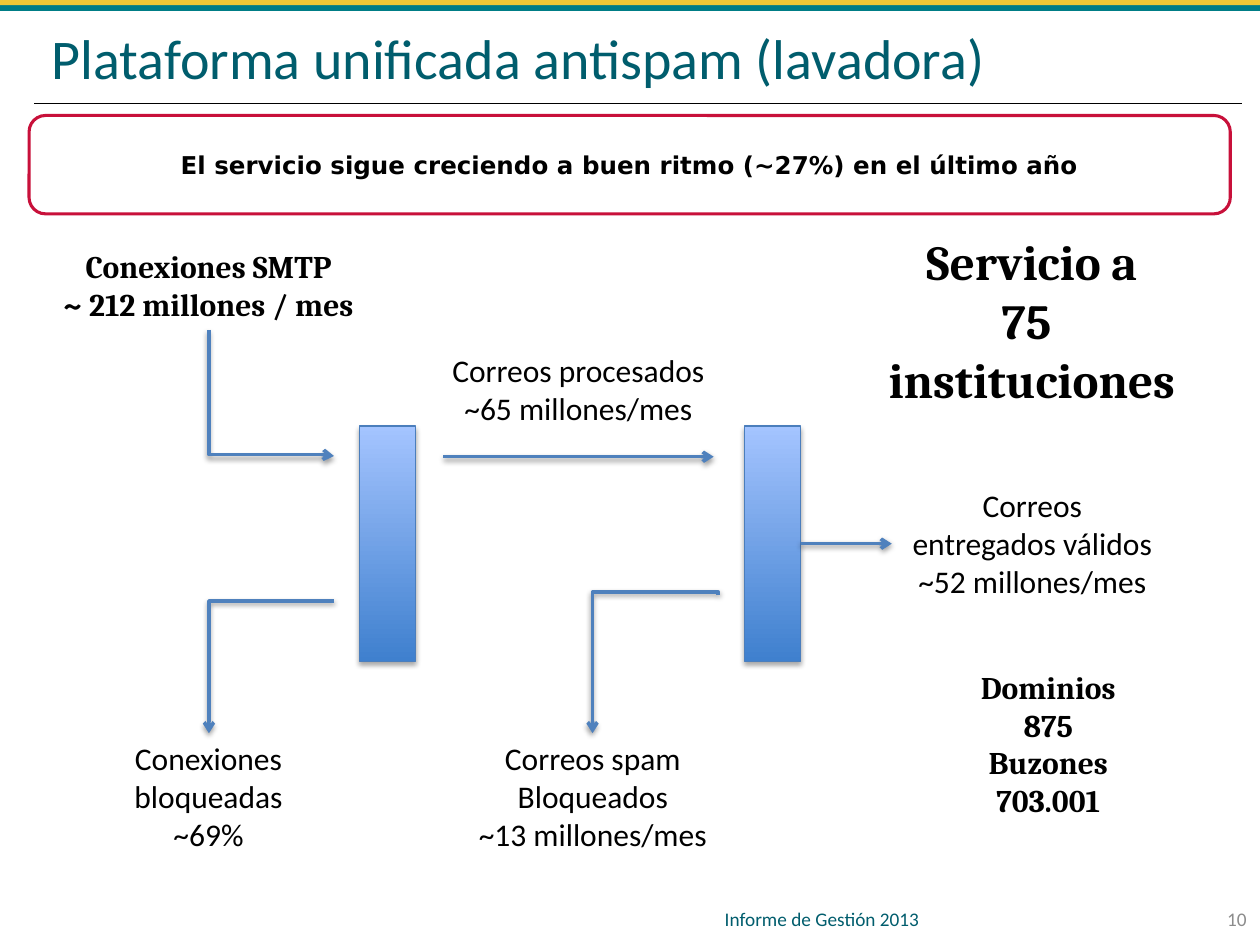
from lxml import etree
from pptx import Presentation
from pptx.dml.color import RGBColor
from pptx.enum.shapes import MSO_CONNECTOR as Link, MSO_SHAPE as Shape
from pptx.enum.text import MSO_ANCHOR as Anchor, PP_ALIGN as Align
from pptx.oxml.ns import qn
from pptx.util import Pt

COLORS = {
    "teal": "007D86", "yellow": "F1C835", "title": "005D6D", "black": "000000",
    "grey": "8C8C8C", "red": "C8103A", "arrow": "4F81BD", "bar_edge": "4B7EBC",
    "bar_bottom": "3F80CE", "bar_top": "A4C4FF",
}


def rgb(name):
    return RGBColor.from_string(COLORS[name])


def add_shadow(shape, alpha, distance):
    """Add a soft shadow straight below; alpha in percent, distance in points."""
    effects = shape._element.spPr.find(qn("a:effectLst"))
    if effects is None:
        effects = etree.SubElement(shape._element.spPr, qn("a:effectLst"))
    outer = etree.SubElement(effects, qn("a:outerShdw"), blurRad=str(Pt(3.1)),
                             dist=str(Pt(distance)), dir="5400000", rotWithShape="0")
    color = etree.SubElement(outer, qn("a:srgbClr"), val=COLORS["black"])
    etree.SubElement(color, qn("a:alpha"), val=str(alpha * 1000))


def write(shape, lines, size, font="Calibri", color="black", bold=False,
          align=Align.CENTER, anchor=Anchor.TOP, wrap=True):
    frame = shape.text_frame
    frame.word_wrap = wrap
    frame.vertical_anchor = anchor
    frame.text = "\n".join(lines)
    for para in frame.paragraphs:
        para.alignment = align
        for span in para.runs:
            span.font.size = Pt(size)
            span.font.name = font
            span.font.bold = bold
            span.font.color.rgb = rgb(color)


def add_text(page, left, top, width, height, lines, size=18, **style):
    box = page.shapes.add_textbox(Pt(left), Pt(top), Pt(width), Pt(height))
    write(box, lines, size, **style)


def add_band(page, height, color):
    band = page.shapes.add_shape(Shape.RECTANGLE, 0, 0, Pt(720), Pt(height))
    band.shadow.inherit = False
    band.fill.solid()
    band.fill.fore_color.rgb = rgb(color)
    band.line.fill.background()


def add_filter_bar(page, left):
    bar = page.shapes.add_shape(Shape.RECTANGLE, Pt(left), Pt(243.5), Pt(32.2), Pt(134.4))
    bar.shadow.inherit = False
    bar.fill.gradient()
    bar.fill.gradient_angle = 90
    for stop, color in zip(bar.fill.gradient_stops, ("bar_bottom", "bar_top")):
        stop.color.rgb = rgb(color)
    bar.line.color.rgb = rgb("bar_edge")
    bar.line.width = Pt(0.75)
    add_shadow(bar, 35, 1.8)


def add_banner(page, text):
    banner = page.shapes.add_shape(Shape.ROUNDED_RECTANGLE,
                                   Pt(16.6), Pt(66), Pt(686.4), Pt(56.2))
    banner.shadow.inherit = False
    banner.fill.background()
    banner.line.color.rgb = rgb("red")
    banner.line.width = Pt(1.75)
    write(banner, [text], 14, font="DejaVu Sans", bold=True, anchor=Anchor.MIDDLE)


def style_arrow(link):
    link.line.color.rgb = rgb("arrow")
    link.line.width = Pt(2)
    etree.SubElement(link.line._get_or_add_ln(), qn("a:tailEnd"), type="arrow")
    add_shadow(link, 38, 1.6)


def add_arrow(page, x1, x2, y):
    style_arrow(page.shapes.add_connector(Link.STRAIGHT, Pt(x1), Pt(y), Pt(x2), Pt(y)))


def add_elbow(page, x1, y1, x2, y2, bend):
    """Draw a downward elbow arrow; bend is the share of the fall before it crosses over."""
    length, breadth = y2 - y1, abs(x2 - x1)
    left, top = (x1 + x2 - length) / 2, (y1 + y2 - breadth) / 2
    link = page.shapes.add_connector(Link.ELBOW, Pt(left), Pt(top),
                                     Pt(left + length), Pt(top + breadth))
    frame = link._element.spPr.find(qn("a:xfrm"))
    if x2 > x1:
        frame.set("rot", "16200000")
        frame.set("flipH", "1")
    else:
        frame.set("rot", "5400000")
    geometry = link._element.spPr.find(qn("a:prstGeom"))
    guides = geometry.find(qn("a:avLst"))
    if guides is None:
        guides = etree.SubElement(geometry, qn("a:avLst"))
    etree.SubElement(guides, qn("a:gd"), name="adj1", fmla=f"val {round(bend * 100000)}")
    style_arrow(link)


def add_frame(page):
    """Top bands, title with its rule, and footer."""
    add_band(page, 6.3, "teal")
    add_band(page, 3, "yellow")
    rule = page.shapes.add_connector(Link.STRAIGHT, Pt(19.6), Pt(59.2), Pt(710), Pt(59.2))
    rule.line.color.rgb = rgb("black")
    rule.line.width = Pt(0.75)
    etree.SubElement(rule._element.spPr, qn("a:effectLst"))
    add_text(page, 22.4, 5, 676, 54.8, ["Plataforma unificada antispam (lavadora)"], 32,
             color="title", align=Align.LEFT, anchor=Anchor.MIDDLE)
    add_text(page, 671.8, 510.6, 47.6, 28.8, ["10"], 11,
             color="grey", align=Align.RIGHT, anchor=Anchor.MIDDLE)
    add_text(page, 365, 510.6, 209.6, 28.8, ["Informe de Gestión 2013"], 11,
             color="title", anchor=Anchor.MIDDLE)


def add_flow(page):
    for left in (205.3, 425.3):
        add_filter_bar(page, left)
    add_elbow(page, 119.4, 188.6, 190.8, 260.6, 0.99)
    add_elbow(page, 190.8, 343.4, 119.4, 419, 0)
    add_elbow(page, 410.4, 339.8, 338.6, 419, -0.02)
    add_arrow(page, 253.4, 407.8, 261)
    add_arrow(page, 457.5, 509.6, 310.7)

    heading = {"font": "Cambria", "bold": True}
    add_text(page, 24.5, 137.5, 189.4, 51,
             ["Conexiones SMTP", "~ 212 millones / mes"], wrap=False, **heading)
    add_text(page, 69.1, 419, 100.1, 72.7,
             ["Conexiones", "bloqueadas", "~69%"], wrap=False)
    add_text(page, 250.6, 197, 159.8, 51,
             ["Correos procesados", "~65 millones/mes"], wrap=False)
    add_text(page, 509.6, 274.3, 160.6, 72.7,
             ["Correos", "entregados válidos", "~52 millones/mes"])
    add_text(page, 265.7, 419, 146.2, 72.7,
             ["Correos spam", "Bloqueados", "~13 millones/mes"], wrap=False)
    add_text(page, 498.2, 128.9, 182.9, 108.7,
             ["Servicio a", "75 ", "instituciones"], 28, wrap=False, **heading)
    add_text(page, 551.5, 378, 95, 94.3,
             ["Dominios", "875", "Buzones", "703.001"], **heading)


def main():
    deck = Presentation()
    deck.slide_width, deck.slide_height = Pt(720), Pt(540)
    page = deck.slides.add_slide(deck.slide_layouts[6])
    add_frame(page)
    add_flow(page)
    add_banner(page, "El servicio sigue creciendo a buen ritmo (~27%) en el último año")
    deck.save("out.pptx")


if __name__ == "__main__":
    main()
